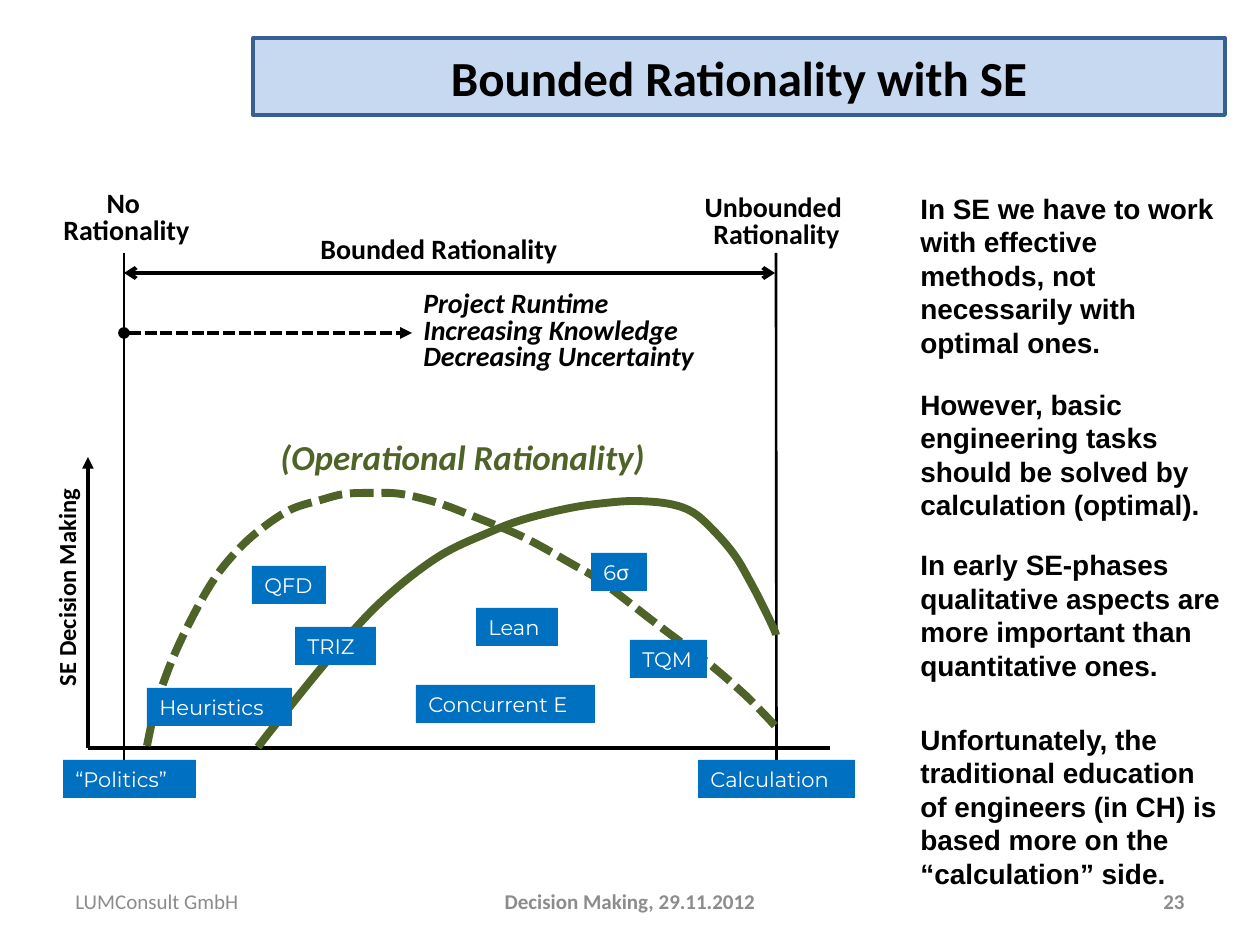
from pptx import Presentation
from pptx.dml.color import RGBColor
from pptx.enum.dml import MSO_LINE
from pptx.enum.shapes import MSO_CONNECTOR, MSO_SHAPE
from pptx.enum.text import MSO_ANCHOR, PP_ALIGN
from pptx.oxml.ns import qn
from pptx.util import Emu, Pt
from lxml.etree import SubElement

BLACK, WHITE, GREY = "000000", "FFFFFF", "8C8C8C"
GREEN, BLUE, PALE, NAVY = "4F6228", "0070C0", "C6D9F1", "376092"
LEFT, CENTER, RIGHT = PP_ALIGN.LEFT, PP_ALIGN.CENTER, PP_ALIGN.RIGHT
LABELS = [
    ("“Politics”", 3, 580, 133), ("6σ", 531, 373, 56), ("QFD", 192, 386, 74),
    ("TRIZ", 235, 447, 81), ("Lean", 416, 428, 82), ("TQM", 570, 460, 77),
    ("Heuristics", 87, 508, 145), ("Concurrent E", 356, 505, 179),
]
LATE_CURVE = [
    (198, 567), (220, 539), (273, 474), (322, 421), (378, 377), (430, 352),
    (465, 339), (510, 328), (545, 323), (576, 321), (610, 324), (634, 333),
    (657, 354), (676, 377), (691, 403), (702, 424), (714, 449), (716, 455),
]
EARLY_CURVE = [
    (87, 566), (96, 526), (111, 483), (130, 442), (153, 401), (176, 372),
    (200, 350), (230, 330), (261, 320), (285, 314), (312, 313), (341, 314),
    (378, 323), (415, 337), (463, 357), (512, 384), (542, 402), (598, 445),
    (647, 482), (683, 513), (704, 534), (717, 548),
]
ADVICE = [
    ("In SE we have to work with effective methods, not necessarily with optimal ones.", 0),
    ("However, basic engineering tasks should be solved by calculation (optimal).", 16),
    ("In early SE-phases qualitative aspects are more important than quantitative ones.", 15),
    ("Unfortunately, the traditional education of engineers (in CH) is based more on "
     "the “calculation” side.", 23),
]


def px(n):
    return Emu(round(n * 914400 / 126))


def rgb(value):
    return RGBColor.from_string(value)


def write(sp, lines, size, color=BLACK, font="Calibri", bold=True, italic=False,
          align=LEFT, wrap=False, anchor=MSO_ANCHOR.TOP, spacing=None):
    tf = sp.text_frame
    tf.word_wrap = wrap
    tf.vertical_anchor = anchor
    for i, line in enumerate(lines):
        p = tf.paragraphs[0] if i == 0 else tf.add_paragraph()
        p.text = line
        p.alignment = align
        p.line_spacing = spacing
        p.font.name, p.font.size = font, Pt(size)
        p.font.bold, p.font.italic = bold, italic
        p.font.color.rgb = rgb(color)


def text(s, x, y, w, h, lines, size, **style):
    sp = s.shapes.add_textbox(px(x), px(y), px(w), px(h))
    write(sp, lines, size, **style)
    return sp


def rect(s, x, y, w, h, fill):
    sp = s.shapes.add_shape(MSO_SHAPE.RECTANGLE, px(x), px(y), px(w), px(h))
    sp.shadow.inherit = False
    sp.fill.solid()
    sp.fill.fore_color.rgb = rgb(fill)
    sp.line.fill.background()
    return sp


def label(s, x, y, w, caption):
    sp = rect(s, x, y, w, 38, BLUE)
    write(sp, [caption], 12, color=WHITE, font="Montserrat", bold=False,
          wrap=True, anchor=MSO_ANCHOR.MIDDLE)
    return sp


def line(s, x1, y1, x2, y2, width=2.25, head=None, tail=None, dash=None):
    c = s.shapes.add_connector(MSO_CONNECTOR.STRAIGHT, px(x1), px(y1), px(x2), px(y2))
    c.line.color.rgb = rgb(BLACK)
    c.line.width = Pt(width)
    if dash:
        c.line.dash_style = dash
    ln = c.line._get_or_add_ln()
    for tag, kind in (("a:headEnd", head), ("a:tailEnd", tail)):
        if kind:
            SubElement(ln, qn(tag), type=kind)
    SubElement(c._element.spPr, qn("a:effectLst"))
    return c


def bend(sp):
    nodes = list(sp._element.iter(qn("a:pt")))
    points = [(int(n.get("x")), int(n.get("y"))) for n in nodes]
    padded = [points[0], *points, points[-1]]
    for node, a, b, c, d in zip(nodes[1:], padded, padded[1:], padded[2:], padded[3:]):
        segment = node.getparent()
        segment.tag = qn("a:cubicBezTo")
        controls = [[q + (r - p) / 6 for p, q, r in zip(a, b, c)],
                    [q - (r - p) / 6 for p, q, r in zip(b, c, d)]]
        for u, v in controls:
            SubElement(segment, qn("a:pt"), x=str(round(u)), y=str(round(v)))
        segment.append(node)


def curve(s, x, y, points, dash=None):
    start, *rest = [(px(x + u), px(y + v)) for u, v in points]
    fb = s.shapes.build_freeform(*start)
    fb.add_line_segments(rest, close=False)
    sp = fb.convert_to_shape()
    bend(sp)
    sp.shadow.inherit = False
    sp.fill.background()
    sp.line.color.rgb = rgb(GREEN)
    sp.line.width = Pt(4.5)
    if dash:
        sp.line.dash_style = dash


def title(s, x, y, w, h):
    sp = rect(s, x, y, w, h, PALE)
    sp.line.color.rgb = rgb(NAVY)
    sp.line.width = Pt(2.25)
    write(sp, ["Bounded Rationality with SE"], 28, align=CENTER, wrap=True,
          anchor=MSO_ANCHOR.MIDDLE)


def axes(s, x, y):
    left, right, base = x + 64, x + 716, y + 568
    line(s, x + 28, base, x + 770, base)
    line(s, x + 28, base, x + 28, y + 277, tail="triangle")
    line(s, left, y + 580, left, y + 73, 1.5)
    limit = line(s, right, y + 580, right, y + 73, 1.5)
    line(s, left, y + 93, right - 1, y + 93, head="arrow", tail="arrow")
    line(s, left, y + 153, x + 352, y + 153, head="oval", tail="triangle",
         dash=MSO_LINE.SQUARE_DOT)
    return limit


def captions(s, x, y):
    text(s, x - 110, y + 380, 234, 43, ["SE Decision Making"], 14).rotation = 270
    text(s, x + 248, y + 45, 284, 47, ["Bounded Rationality"], 16)
    text(s, x + 629, y + 11, 175, 67, ["Unbounded ", "Rationality"], 16,
         align=CENTER, spacing=Pt(15))
    text(s, x - 14, y + 7, 161, 67, ["No ", "Rationality"], 16,
         align=CENTER, spacing=Pt(15))
    text(s, x + 351, y + 107, 305, 92,
         ["Project Runtime", "Increasing Knowledge", "Decreasing Uncertainty"], 16,
         italic=True, spacing=Pt(15))
    text(s, x + 208, y + 249, 401, 55, ["(Operational Rationality)"], 20,
         color=GREEN, italic=True)


def diagram(s, x, y):
    limit = axes(s, x, y)
    captions(s, x, y)
    curve(s, x, y, LATE_CURVE)
    curve(s, x, y, EARLY_CURVE, MSO_LINE.SQUARE_DOT)
    limit.begin_connect(label(s, x + 638, y + 580, 157, "Calculation"), 0)
    for caption, dx, dy, w in LABELS:
        label(s, x + dx, y + dy, w, caption)


def advice(s, x, y, w, h):
    sp = text(s, x, y, w, h, [words for words, _ in ADVICE], 16, font="Arial", wrap=True)
    for p, (_, gap) in zip(sp.text_frame.paragraphs, ADVICE):
        p.space_before = Pt(gap)


def footer(s, x, y, w, h):
    parts = [("LUMConsult GmbH", 0, 294, LEFT, False),
             ("Decision Making, 29.11.2012", (w - 400) // 2, 400, CENTER, True),
             ("23", w - 294, 294, RIGHT, True)]
    for words, dx, width, align, bold in parts:
        text(s, x + dx, y, width, h, [words], 12, color=GREY, bold=bold,
             align=align, wrap=True, anchor=MSO_ANCHOR.MIDDLE)


def main():
    prs = Presentation()
    prs.slide_width, prs.slide_height = px(1260), px(945)
    s = prs.slides.add_slide(prs.slide_layouts[6])
    title(s, 253, 38, 972, 77)
    footer(s, 63, 876, 1134, 50)
    advice(s, 908, 185, 328, 659)
    diagram(s, 60, 180)
    prs.save("out.pptx")


if __name__ == "__main__":
    main()
